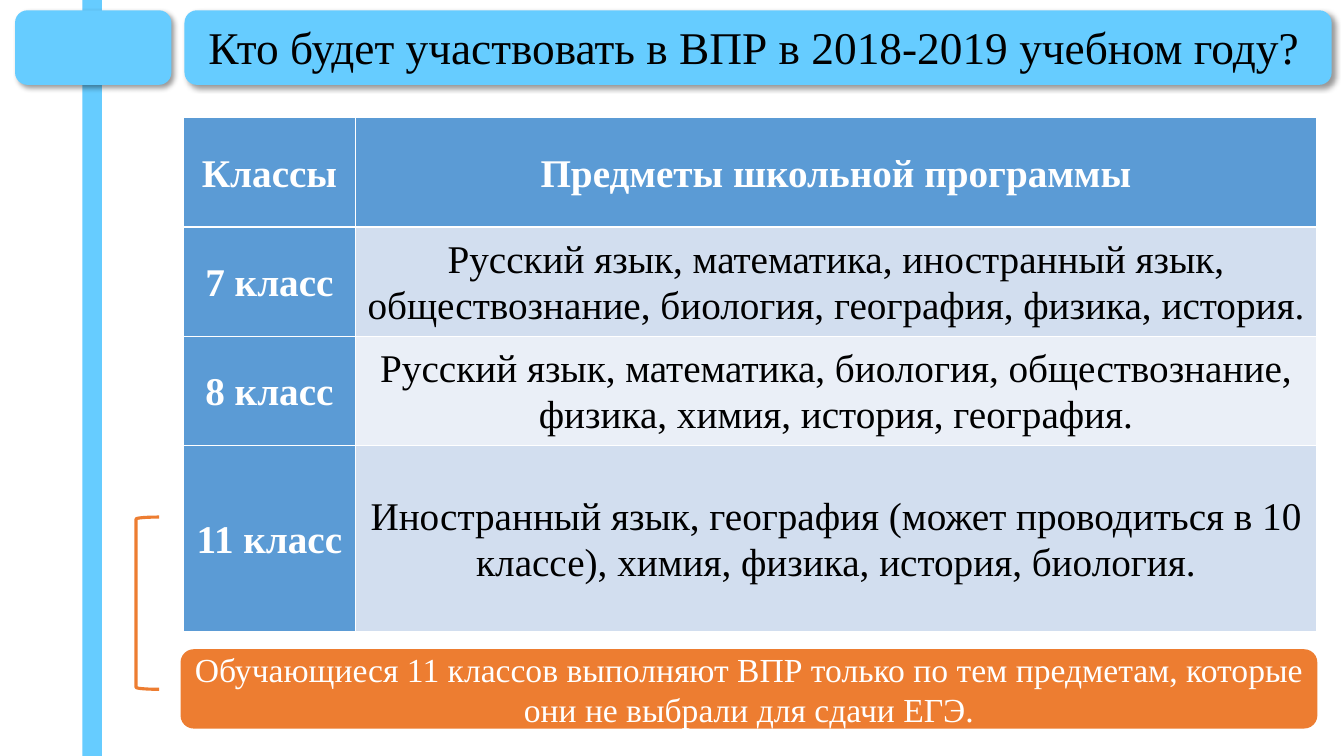
from lxml import etree
from pptx import Presentation
from pptx.dml.color import RGBColor as Rgb
from pptx.enum.shapes import MSO_SHAPE as Form
from pptx.enum.text import MSO_ANCHOR as Anchor, MSO_AUTO_SIZE as Fit, PP_ALIGN as Align
from pptx.oxml.ns import qn
from pptx.util import Cm, Pt

HUES = {
    "sky": "66CCFF", "orange": "ED7D31", "head": "5B9BD5",
    "odd": "D2DEEF", "even": "EAEFF7", "white": "FFFFFF", "black": "000000",
}
FONT = "Times New Roman"

ROWS = [
    ("Классы", "Предметы школьной программы"),
    ("7 класс", "Русский язык, математика, иностранный язык, "
                "обществознание, биология, география, физика, история."),
    ("8 класс", "Русский язык, математика, биология, обществознание, "
                "физика, химия, история, география."),
    ("11 класс", "Иностранный язык, география (может проводиться в 10 "
                 "классе), химия, физика, история, биология."),
]


def hue(name):
    return Rgb.from_string(HUES[name])


def write(frame, text, size=28, color="black", bold=False,
          align=Align.CENTER, space=1.0):
    """Put one formatted paragraph into a text frame."""
    frame.word_wrap = True
    par = frame.paragraphs[0]
    par.alignment = align
    par.line_spacing = space
    run = par.add_run()
    run.text = text
    font = run.font
    font.name, font.size, font.bold = FONT, Pt(size), bold
    font.color.rgb = hue(color)


class Deck:
    def __init__(self, wide, high):
        self.show = Presentation()
        self.show.slide_width, self.show.slide_height = Cm(wide), Cm(high)
        self.slide = self.show.slides.add_slide(self.show.slide_layouts[5])
        self.shapes = self.slide.shapes

    def title(self, text, box, **style):
        head = self.shapes.title
        head.left, head.top, head.width, head.height = map(Cm, box)
        frame = head.text_frame
        frame.auto_size = Fit.NONE
        frame.vertical_anchor = Anchor.MIDDLE
        write(frame, text, **style)
        head.element.getparent().append(head.element)  # above the bars

    def shape(self, form, box, fill=None, line=None, shade=False):
        item = self.shapes.add_shape(form, *map(Cm, box))
        item.shadow.inherit = False
        if fill:
            item.fill.solid()
            item.fill.fore_color.rgb = hue(fill)
        else:
            item.fill.background()
        if line:
            item.line.color.rgb = hue(line)
            item.line.width = Pt(2.25)
        else:
            item.line.fill.background()
        if shade:
            self.shade(item)
        return item

    def shade(self, item):
        list_ = item.element.spPr.find(qn("a:effectLst"))
        cast = etree.SubElement(list_, qn("a:outerShdw"), blurRad=str(Pt(4)),
                                dist=str(Pt(3)), dir="2700000", algn="tl", rotWithShape="0")
        tint = etree.SubElement(cast, qn("a:srgbClr"), val=HUES["black"])
        etree.SubElement(tint, qn("a:alpha"), val="40000")

    def note(self, text, box, fill, **style):
        item = self.shape(Form.ROUNDED_RECTANGLE, box, fill)
        item.text_frame.vertical_anchor = Anchor.MIDDLE
        write(item.text_frame, text, **style)

    def table(self, rows, box, wides, highs):
        grid = self.shapes.add_table(len(rows), len(wides), *map(Cm, box)).table
        grid.first_col = True
        for col, wide in zip(grid.columns, wides):
            col.width = Cm(wide)
        for row, high in zip(grid.rows, highs):
            row.height = Cm(high)
        for i, row in enumerate(rows):
            for j, text in enumerate(row):
                cell = grid.cell(i, j)
                key = i == 0 or j == 0
                cell.margin_left = cell.margin_right = Cm(0.18)
                cell.margin_top = cell.margin_bottom = 0
                cell.vertical_anchor = Anchor.MIDDLE
                cell.fill.solid()
                cell.fill.fore_color.rgb = hue("head" if key else "odd" if i % 2 else "even")
                write(cell.text_frame, text, bold=key, space=1.07,
                      color="white" if key else "black")


def main():
    deck = Deck(33.87, 19.05)

    # Vertical stripe and header bars
    for top, high in ((0, 1.24), (1.27, 17.78)):
        deck.shape(Form.RECTANGLE, (2.08, top, 0.49, high), "sky")
    for left, wide in ((4.65, 28.91), (0.38, 3.94)):
        deck.shape(Form.ROUNDED_RECTANGLE, (left, 0.26, wide, 1.88), "sky", shade=True)
    deck.title("Кто будет участвовать в ВПР в 2018-2019 учебном году?",
               (5, 0.41, 28.2, 1.68), size=32.4, align=Align.LEFT, space=0.9)

    # Remark on the 11th grade
    deck.note("Обучающиеся 11 классов выполняют ВПР только по тем предметам, "
              "которые они не выбрали для сдачи ЕГЭ.",
              (4.55, 16.36, 28.65, 2), "orange", size=24, color="white")

    # Grades and subjects
    deck.table(ROWS, (4.63, 2.97, 28.55, 12.95), (4.32, 24.23),
               (2.75, 2.75, 2.75, 4.7))

    # Bracket from the last row to the remark
    deck.shape(Form.LEFT_BRACKET, (3.43, 13.03, 0.58, 4.34), line="orange")

    deck.show.save("out.pptx")


if __name__ == "__main__":
    main()
